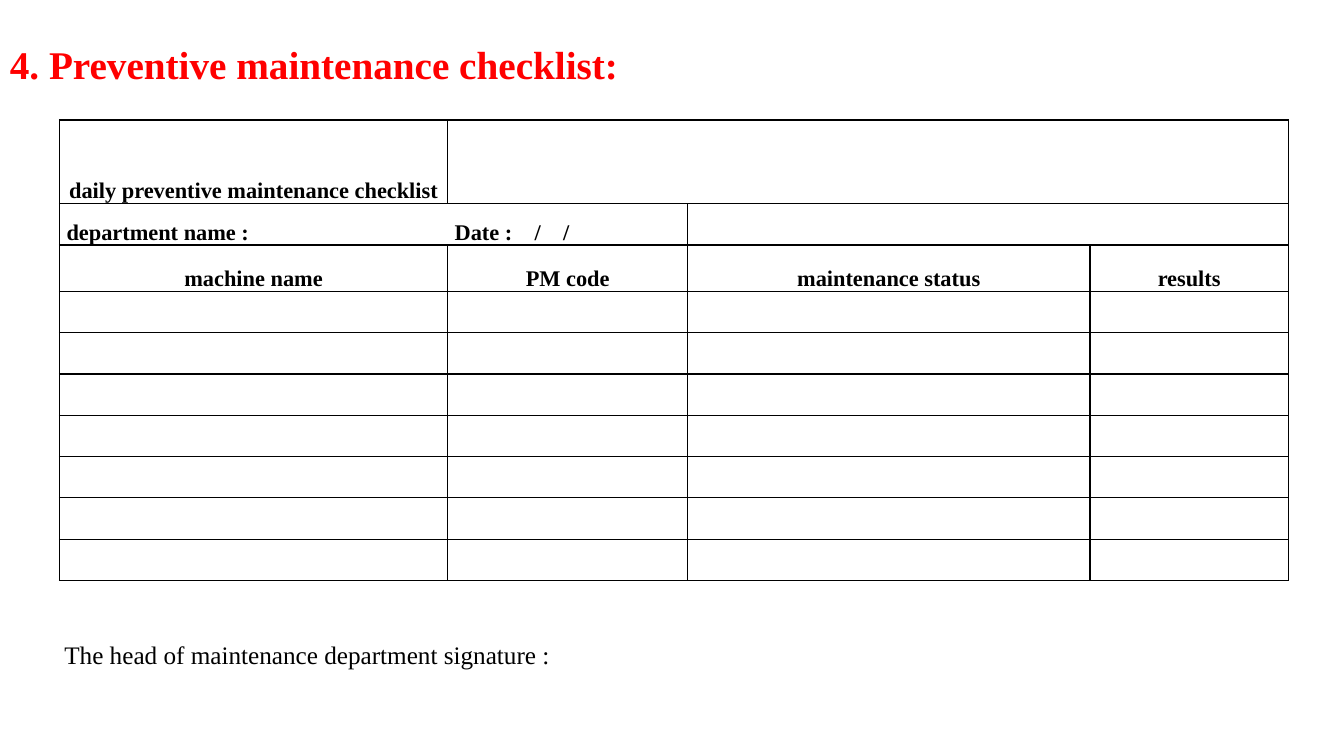
from lxml.etree import SubElement
from pptx import Presentation
from pptx.dml.color import RGBColor
from pptx.enum.text import MSO_ANCHOR, PP_ALIGN
from pptx.oxml.ns import qn
from pptx.util import Inches, Pt

# Content
TITLE = "4. Preventive maintenance checklist:"
SIGNATURE = "The head of maintenance department signature :"
HEADER_ROWS = [
    ["daily preventive maintenance checklist", "", "", ""],
    ["department name :", "Date :    /    /", "", ""],
    ["machine name", "PM code", "maintenance status", "results"],
]
ENTRY_ROWS = 7
FOOTER_ROWS = 2

# Look
FONT = "Times New Roman"
COLORS = {"title": "FF0000", "ink": "000000"}
COLUMN_WIDTHS = [3.85, 2.38, 3.99, 1.97]
ROW_HEIGHTS = [0.83, 0.41, 0.46] + [0.41] * ENTRY_ROWS + [0.32] * FOOTER_ROWS
RULED_ROWS = len(HEADER_ROWS) + ENTRY_ROWS
OPEN_EDGES = {(0, 2), (0, 3), (1, 1), (1, 3)}  # row, column whose left line is left out
LEFT_ALIGNED_ROW = 1


def add_text(paragraph, text, size, color, bold=False):
    run = paragraph.add_run()
    run.text = text
    run.font.name = FONT
    run.font.size = Pt(size)
    run.font.bold = bold
    run.font.color.rgb = RGBColor.from_string(COLORS[color])


def set_borders(cell, visible):
    properties = cell._tc.get_or_add_tcPr()
    for side in ("L", "R", "T", "B"):
        line = SubElement(properties, qn(f"a:ln{side}"), w=str(Pt(1)))
        if visible[side]:
            fill = SubElement(line, qn("a:solidFill"))
            SubElement(fill, qn("a:srgbClr"), val=COLORS["ink"])
        else:
            SubElement(line, qn("a:noFill"))


def add_text_box(slide, left, top, width, height):
    box = slide.shapes.add_textbox(Inches(left), Inches(top), Inches(width), Inches(height))
    return box.text_frame


presentation = Presentation()
presentation.slide_width = Inches(13.33)
presentation.slide_height = Inches(7.5)
slide = presentation.slides.add_slide(presentation.slide_layouts[6])

# Title
title_frame = add_text_box(slide, 0, 0, 11.5, 1.33)
title_frame.word_wrap = True
title_frame.vertical_anchor = MSO_ANCHOR.MIDDLE
title_frame.paragraphs[0].line_spacing = 0.9
add_text(title_frame.paragraphs[0], TITLE, 28, "title", bold=True)

# Checklist table
table = slide.shapes.add_table(
    len(ROW_HEIGHTS), len(COLUMN_WIDTHS), Inches(0.59), Inches(1.19),
    Inches(sum(COLUMN_WIDTHS)), Inches(sum(ROW_HEIGHTS)),
).table
table.first_row = False
table.horz_banding = False
for column, width in zip(table.columns, COLUMN_WIDTHS):
    column.width = Inches(width)

blank_row = [""] * len(COLUMN_WIDTHS)
rows = HEADER_ROWS + [blank_row] * (ENTRY_ROWS + FOOTER_ROWS)
for row_index, (texts, height) in enumerate(zip(rows, ROW_HEIGHTS)):
    table.rows[row_index].height = Inches(height)
    ruled = row_index < RULED_ROWS
    for column_index, text in enumerate(texts):
        cell = table.cell(row_index, column_index)
        set_borders(cell, {
            "L": ruled and (row_index, column_index) not in OPEN_EDGES,
            "R": ruled and (row_index, column_index + 1) not in OPEN_EDGES,
            "T": row_index <= RULED_ROWS,
            "B": ruled,
        })
        cell.fill.background()
        cell.vertical_anchor = MSO_ANCHOR.BOTTOM
        cell.margin_left = cell.margin_right = Inches(0.07)
        cell.margin_top = cell.margin_bottom = 0
        if text:
            paragraph = cell.text_frame.paragraphs[0]
            paragraph.line_spacing = 1.15
            paragraph.alignment = PP_ALIGN.LEFT if row_index == LEFT_ALIGNED_ROW else PP_ALIGN.CENTER
            add_text(paragraph, text, 16, "ink", bold=True)

# Signature line
signature_frame = add_text_box(slide, 0.54, 6.29, 5.07, 0.4)
signature_frame.word_wrap = False
add_text(signature_frame.paragraphs[0], SIGNATURE, 18, "ink")

presentation.save("out.pptx")
